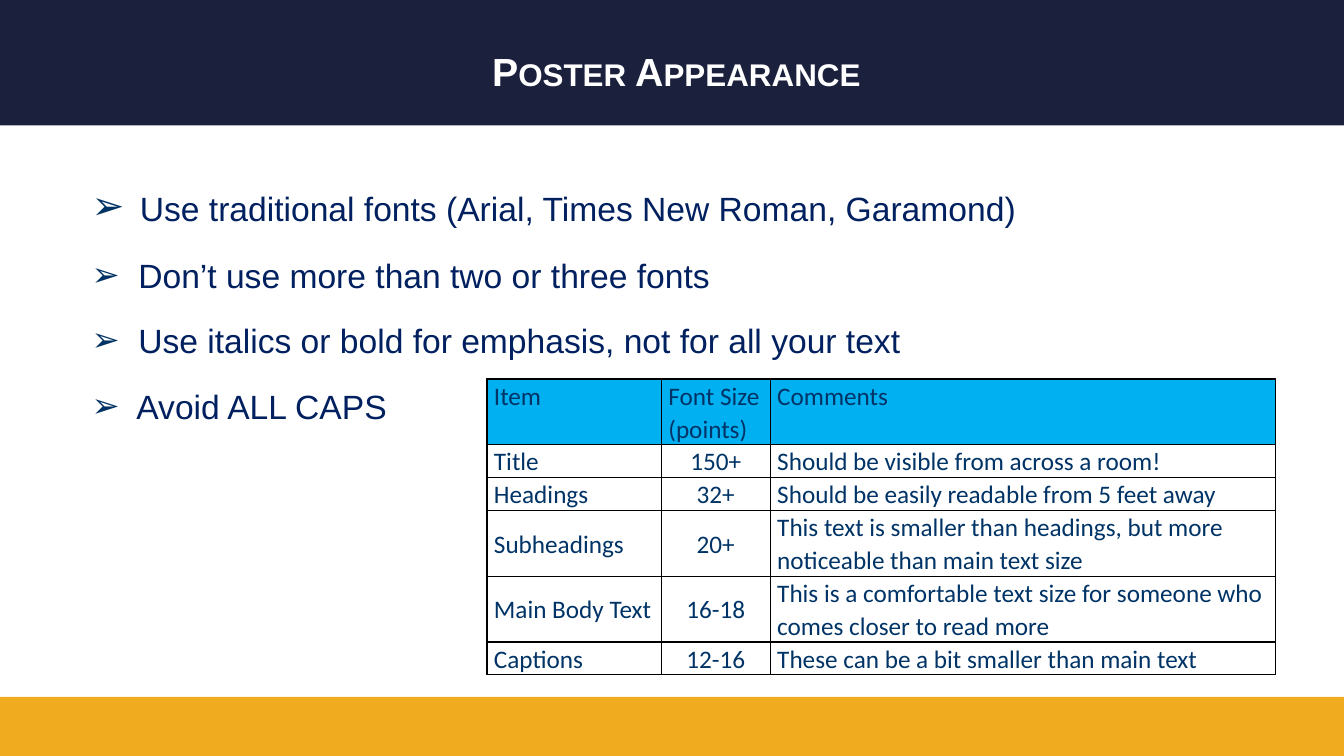
"""Build the slide on poster appearance."""
from dataclasses import dataclass

from lxml import etree
from pptx import Presentation
from pptx import util as u
from pptx.dml.color import RGBColor
from pptx.enum import shapes, text
from pptx.oxml import ns


@dataclass(frozen=True)
class Theme:
    """Colours, fonts and type sizes of the slide."""
    navy: str = "1B203D"
    gold: str = "F1AB1F"
    white: str = "FFFFFF"
    black: str = "000000"
    body: str = "002060"
    bullet: str = "003264"
    cell: str = "003366"
    header: str = "00B0F0"
    sans: str = "Arial"
    table: str = "Calibri"
    title_pt: int = 28
    body_pt: int = 24
    cell_pt: int = 18


T = Theme()
WIDTH, HEIGHT = u.Inches(13.33), u.Inches(7.5)
LINE_SHARE = 4.35
COLUMN_SHARES = (12.98, 8.1, 37.58)
BULLETS = (
    "Use traditional fonts (Arial, Times New Roman, Garamond)",
    "Don’t use more than two or three fonts",
    "Use italics or bold for emphasis, not for all your text",
    "Avoid ALL CAPS",
)
SIZE_GUIDE = (
    (2, ("Item", "Font Size (points)", "Comments")),
    (1, ("Title", "150+", "Should be visible from across a room!")),
    (1, ("Headings", "32+", "Should be easily readable from 5 feet away")),
    (2, ("Subheadings", "20+",
         "This text is smaller than headings, but more noticeable than main text size")),
    (2, ("Main Body Text", "16-18",
         "This is a comfortable text size for someone who comes closer to read more")),
    (1, ("Captions", "12-16", "These can be a bit smaller than main text")),
)


def across(share):
    """Return a percentage of the slide's width."""
    return round(WIDTH * share / 100)


def down(share):
    """Return a percentage of the slide's height."""
    return round(HEIGHT * share / 100)


def box(left, top, width, height):
    """Return a frame given as percentages of the slide."""
    return across(left), down(top), across(width), down(height)


def add_xml(parent, tag, **attributes):
    """Append a DrawingML element and return it."""
    return etree.SubElement(parent, ns.qn(tag), attributes)


def add_text(p, words, size=T.body_pt, font=T.sans, color=T.body,
             bold=False, small_caps=False):
    """Add a formatted run to a paragraph."""
    r = p.add_run()
    r.text = words
    r.font.size = u.Pt(size)
    r.font.name = font
    r.font.bold = bold
    r.font.color.rgb = RGBColor.from_string(color)
    if small_caps:
        r.font._element.set("cap", "small")


def add_band(slide, top, height, color):
    """Draw a plain band over the full width."""
    sp = slide.shapes.add_shape(shapes.MSO_SHAPE.RECTANGLE, *box(0, top, 100, height))
    sp.shadow.inherit = False
    sp.fill.solid()
    sp.fill.fore_color.rgb = RGBColor.from_string(color)
    sp.line.fill.background()


def add_frame(slide, frame, anchor):
    """Add a wrapping text box and return its text frame."""
    tf = slide.shapes.add_textbox(*frame).text_frame
    tf.word_wrap = True
    tf.vertical_anchor = anchor
    return tf


def add_title(slide, words):
    """Add the centred title in small capitals."""
    tf = add_frame(slide, box(4.88, 2.13, 90.92, 14.4), text.MSO_ANCHOR.MIDDLE)
    p = tf.paragraphs[0]
    p.alignment = text.PP_ALIGN.CENTER
    add_text(p, words, size=T.title_pt, color=T.white, bold=True, small_caps=True)


def set_bullet(p):
    """Give a paragraph an arrow bullet with a hanging indent."""
    indent = u.Inches(0.37)
    p_pr = p._p.get_or_add_pPr()
    p_pr.set("marL", str(indent))
    p_pr.set("indent", str(-indent))
    add_xml(add_xml(p_pr, "a:buClr"), "a:srgbClr", val=T.bullet)
    add_xml(p_pr, "a:buFont", typeface=T.sans)
    add_xml(p_pr, "a:buChar", char="➢")


def add_bullets(slide, items):
    """Add the list of advice, its first bullet larger."""
    tf = add_frame(slide, box(6.08, 23.47, 78.39, 72.93), text.MSO_ANCHOR.TOP)
    for i, item in enumerate(items):
        p = tf.add_paragraph() if i else tf.paragraphs[0]
        p.space_before, p.space_after = u.Pt(6), u.Pt(12)
        set_bullet(p)
        add_text(p, " ", size=T.body_pt if i else T.title_pt)
        add_text(p, item)


def set_borders(cell):
    """Draw thin lines on all four sides of a cell."""
    tc_pr = cell._tc.get_or_add_tcPr()
    for side in "LRTB":
        ln = add_xml(tc_pr, f"a:ln{side}", w=str(u.Pt(1)))
        add_xml(add_xml(ln, "a:solidFill"), "a:srgbClr", val=T.black)


def fill_cell(cell, words, is_header, column):
    """Format one table cell and write its words."""
    set_borders(cell)
    if is_header:
        cell.fill.solid()
        cell.fill.fore_color.rgb = RGBColor.from_string(T.header)
    else:
        cell.fill.background()
    cell.margin_left = cell.margin_right = u.Inches(0.07)
    cell.margin_top = cell.margin_bottom = 0
    top = is_header or column == 2
    cell.vertical_anchor = text.MSO_ANCHOR.TOP if top else text.MSO_ANCHOR.MIDDLE
    p = cell.text_frame.paragraphs[0]
    p.line_spacing = 1.07
    if column == 1 and not is_header:
        p.alignment = text.PP_ALIGN.CENTER
    add_text(p, words, size=T.cell_pt, font=T.table, color=T.cell)


def add_size_table(slide, rows):
    """Add the table of type sizes, each row as high as its lines."""
    height = LINE_SHARE * sum(lines for lines, _ in rows)
    frame = box(36.23, 50.13, sum(COLUMN_SHARES), height)
    table = slide.shapes.add_table(len(rows), len(COLUMN_SHARES), *frame).table
    table.horz_banding = False
    table.first_row = False
    for column, share in zip(table.columns, COLUMN_SHARES):
        column.width = across(share)
    for i, (lines, words) in enumerate(rows):
        table.rows[i].height = down(lines * LINE_SHARE)
        for j, entry in enumerate(words):
            fill_cell(table.cell(i, j), entry, i == 0, j)


def main():
    """Build and save the slide."""
    prs = Presentation()
    prs.slide_width, prs.slide_height = WIDTH, HEIGHT
    slide = prs.slides.add_slide(prs.slide_layouts[6])
    add_band(slide, 92.2, 7.8, T.gold)
    add_band(slide, 0, 16.6, T.navy)
    add_title(slide, "Poster Appearance")
    add_bullets(slide, BULLETS)
    add_size_table(slide, SIZE_GUIDE)
    prs.save("out.pptx")


if __name__ == "__main__":
    main()
